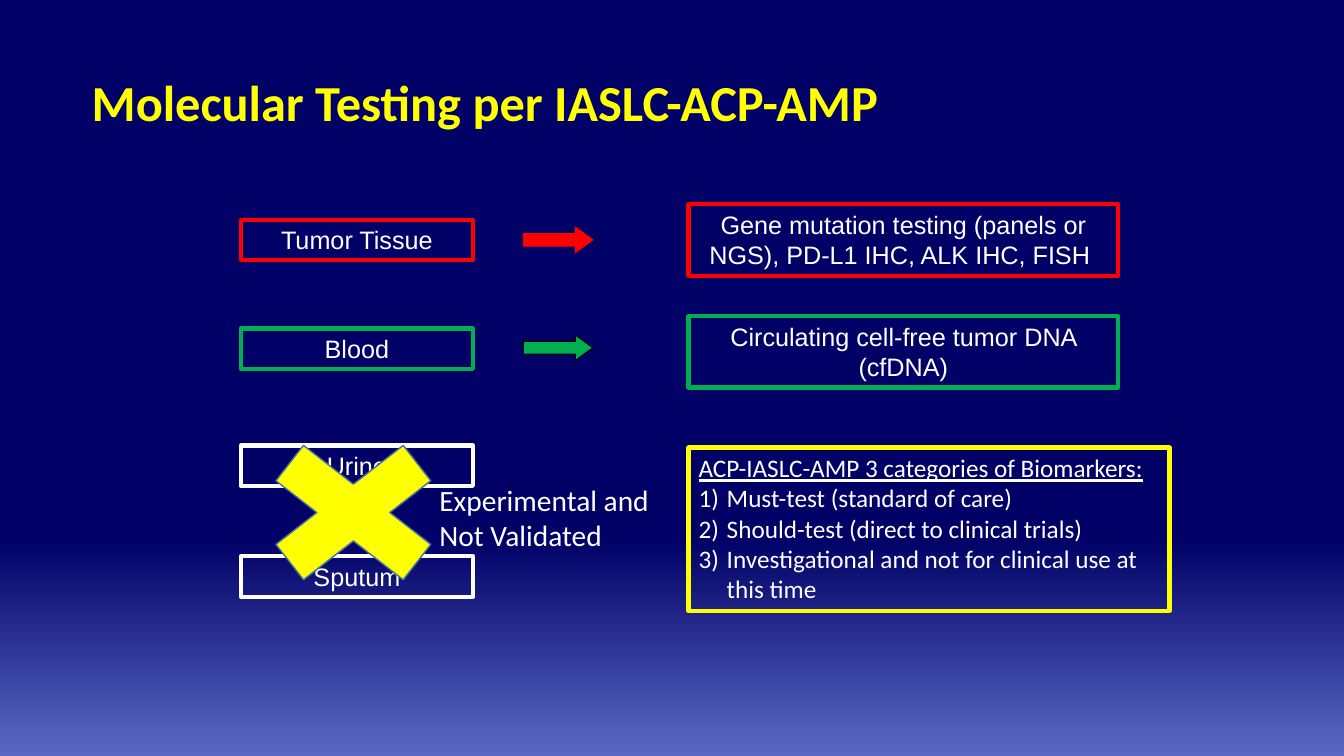
from lxml.etree import SubElement
from pptx import Presentation
from pptx.dml.color import RGBColor
from pptx.enum.shapes import MSO_SHAPE as Shape
from pptx.enum.text import MSO_ANCHOR as Anchor, MSO_AUTO_SIZE as AutoSize, PP_ALIGN as Align
from pptx.oxml.ns import qn
from pptx.util import Inches, Pt


def paint(color, value):
    color.rgb = RGBColor.from_string(value)


def write(para, text, color="FFFFFF", align=Align.LEFT, **formats):
    para.alignment = align
    span = para.add_run()
    span.text = text
    for name, value in formats.items():
        setattr(span.font, name, value)
    paint(span.font.color, color)


RED, GREEN, WHITE, YELLOW = "FF0000", "00B050", "FFFFFF", "FFFF00"
SAMPLE_COLUMN, ARROW_COLUMN, RESULT_COLUMN = 2.39, 5.19, 6.83
SAMPLE_SIZE, ARROW_SIZE, RESULT_SIZE = (2.3, 0.4), (0.69, 0.25), (4.26, 0.71)
TISSUE_ROW, BLOOD_ROW, URINE_ROW, SPUTUM_ROW = 2.38, 3.46, 4.62, 5.72

deck = Presentation()
deck.slide_width, deck.slide_height = Inches(13.33), Inches(7.5)
page = deck.slides.add_slide(deck.slide_layouts[5])

backdrop = page.background.fill
backdrop.gradient()
backdrop.gradient_angle = 270
for stop, (position, value) in zip(backdrop.gradient_stops, [(0.71, "000066"), (1, "5B69C3")]):
    stop.position = position
    paint(stop.color, value)

title = page.shapes.title
title.left, title.top, title.width, title.height = map(Inches, (0.81, 0.5, 10.54, 1.09))
for name, value in {"vertical_anchor": Anchor.MIDDLE, "auto_size": AutoSize.NONE, "word_wrap": True}.items():
    setattr(title.text_frame, name, value)
heading = title.text_frame.paragraphs[0]
heading.line_spacing = 0.9
write(heading, "Molecular Testing per IASLC-ACP-AMP", YELLOW, name="Calibri", size=Pt(36), bold=True)

samples = [
    ("Tumor Tissue", TISSUE_ROW, RED),
    ("Blood", BLOOD_ROW, GREEN),
    ("Urine", URINE_ROW, WHITE),
    ("Sputum", SPUTUM_ROW, WHITE),
]
results = [
    ("Gene mutation testing (panels or NGS), PD-L1 IHC, ALK IHC, FISH ", TISSUE_ROW, RED),
    ("Circulating cell-free tumor DNA (cfDNA)", BLOOD_ROW + 0.03, GREEN),
]
labels = [(SAMPLE_COLUMN, SAMPLE_SIZE, *sample) for sample in samples]
labels += [(RESULT_COLUMN, RESULT_SIZE, *result) for result in results]
categories_text = "ACP-IASLC-AMP 3 categories of Biomarkers:"
categories = [
    "Must-test (standard of care)",
    "Should-test (direct to clinical trials)",
    "Investigational and not for clinical use at this time",
]

outlines = [
    (Shape.RECTANGLE, left, middle - size[1] / 2, *size, None, color, 3, text)
    for left, size, text, middle, color in labels
]
outlines += [
    (Shape.RIGHT_ARROW, ARROW_COLUMN, middle - ARROW_SIZE[1] / 2, *ARROW_SIZE, fill, line, 0.75, "")
    for middle, fill, line in [(TISSUE_ROW, RED, RED), (BLOOD_ROW - 0.01, GREEN, "000000")]
]
outlines += [
    (Shape.MATH_MULTIPLY, 2.29, 4.14, 2.43, 1.89, YELLOW, "43739E", 1, ""),
    (Shape.RECTANGLE, RESULT_COLUMN, 4.44, 4.77, 1.62, None, YELLOW, 3, categories_text),
]

for kind, left, top, width, height, fill, line, weight, text in outlines:
    box = page.shapes.add_shape(kind, *map(Inches, (left, top, width, height)))
    box.shadow.inherit = False
    if fill:
        box.fill.solid()
        paint(box.fill.fore_color, fill)
    else:
        box.fill.background()
    paint(box.line.color, line)
    box.line.width = Pt(weight)
    if kind == Shape.RIGHT_ARROW:
        box.adjustments[1] = 0.69
    frame = box.text_frame
    frame.word_wrap = True
    if text == categories_text:
        frame.vertical_anchor = Anchor.TOP
        write(frame.paragraphs[0], text, name="Calibri", size=Pt(18), underline=True)
        for category in categories:
            para = frame.add_paragraph()
            layout = para._p.get_or_add_pPr()
            layout.set("marL", str(Inches(0.28)))
            layout.set("indent", str(Inches(-0.28)))
            SubElement(layout, qn("a:buFont"), typeface="+mj-lt")
            SubElement(layout, qn("a:buAutoNum"), type="arabicParenR")
            write(para, category, name="Calibri", size=Pt(18))
    elif text:
        frame.vertical_anchor = Anchor.TOP
        write(frame.paragraphs[0], text, align=Align.CENTER, name="Arial", size=Pt(18))

remark = page.shapes.add_textbox(*map(Inches, (4.26, 4.73, 2.44, 0.81)))
remark.text_frame.word_wrap = True
write(remark.text_frame.paragraphs[0], "Experimental and Not Validated", name="Calibri", size=Pt(21))

deck.save("out.pptx")
